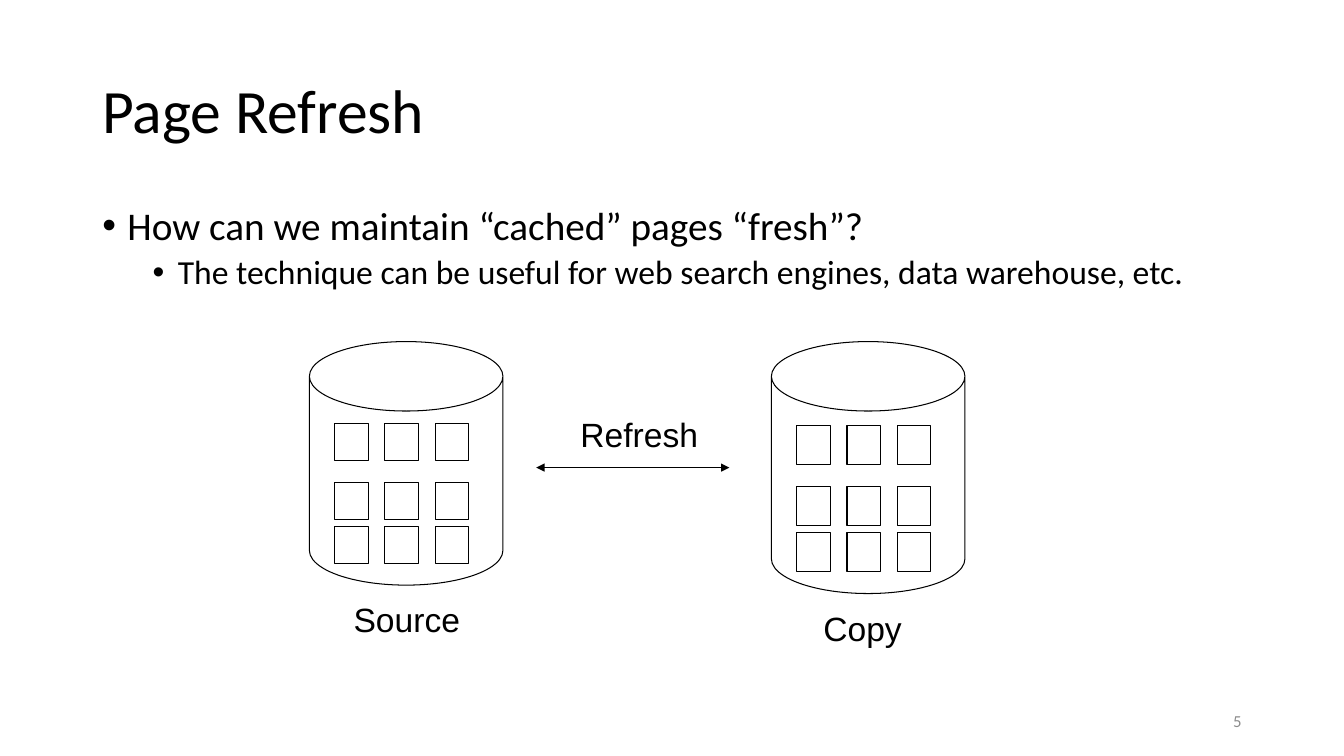
from lxml import etree
from pptx import Presentation
from pptx.dml.color import RGBColor
from pptx.enum.shapes import MSO_CONNECTOR, MSO_SHAPE
from pptx.enum.text import MSO_ANCHOR, PP_ALIGN
from pptx.oxml.ns import qn
from pptx.util import Pt

CAN, RECTANGLE = MSO_SHAPE.CAN, MSO_SHAPE.RECTANGLE
STRAIGHT = MSO_CONNECTOR.STRAIGHT
TOP, MIDDLE = MSO_ANCHOR.TOP, MSO_ANCHOR.MIDDLE
LEFT, RIGHT = PP_ALIGN.LEFT, PP_ALIGN.RIGHT

BLACK, GRAY = "000000", "8C8C8C"
CAN_TOP, CAN_WIDTH = 244, 138.24
PAGE_WIDTH, PAGE_MARGIN, PAGE_STEP = 24, 18, 36
# Page rows and page height as shares of the can height
PAGE_ROWS, PAGE_HEIGHT = (0.335, 0.577, 0.758), 0.153


def color(value):
    return RGBColor.from_string(value)


def set_line(line):
    line.color.rgb = color(BLACK)
    line.width = Pt(0.75)


def add_paragraph(paragraph, text, size, font="Calibri", text_color=BLACK, **formats):
    for name, value in formats.items():
        setattr(paragraph, name, value)
    run = paragraph.add_run()
    run.text = text
    for name, value in {"name": font, "size": Pt(size)}.items():
        setattr(run.font, name, value)
    run.font.color.rgb = color(text_color)


def add_text_box(slide, left, top, width, height, anchor=TOP, wrap=True):
    shape = slide.shapes.add_textbox(Pt(left), Pt(top), Pt(width), Pt(height))
    frame = shape.text_frame
    for name, value in {"word_wrap": wrap, "vertical_anchor": anchor}.items():
        setattr(frame, name, value)
    return frame


def add_label(slide, text, left, top, width):
    frame = add_text_box(slide, left, top, width, 36, wrap=False)
    add_paragraph(frame.paragraphs[0], text, 24, "Arial", alignment=LEFT)


def add_bullet(paragraph, text, size, indent, space_before):
    add_paragraph(paragraph, text, size, line_spacing=0.9, space_before=Pt(space_before))
    properties = paragraph._p.get_or_add_pPr()
    properties.set("marL", str(Pt(indent)))
    properties.set("indent", str(Pt(-18)))
    etree.SubElement(properties, qn("a:buFont")).set("typeface", "Arial")
    etree.SubElement(properties, qn("a:buChar")).set("char", "•")


def add_outline(group, kind, left, top, width, height):
    shape = group.shapes.add_shape(kind, Pt(left), Pt(top), Pt(width), Pt(height))
    shape.shadow.inherit = False
    shape.fill.background()
    set_line(shape.line)
    return shape


def add_database(slide, left, height):
    group = slide.shapes.add_group_shape()
    can = add_outline(group, CAN, left, CAN_TOP, CAN_WIDTH, height)
    can.adjustments[0] = 0.359
    for share in PAGE_ROWS:
        for column in range(3):
            add_outline(group, RECTANGLE, left + PAGE_MARGIN + column * PAGE_STEP,
                        CAN_TOP + share * height, PAGE_WIDTH, PAGE_HEIGHT * height)


def add_double_arrow(slide, start, end, top):
    connector = slide.shapes.add_connector(STRAIGHT, Pt(start), Pt(top), Pt(end), Pt(top))
    set_line(connector.line)
    line = connector.line._get_or_add_ln()
    for tag in ("a:headEnd", "a:tailEnd"):
        etree.SubElement(line, qn(tag)).set("type", "triangle")
    etree.SubElement(connector._element.spPr, qn("a:effectLst"))


def main():
    presentation = Presentation()
    presentation.slide_width, presentation.slide_height = Pt(960), Pt(540)
    slide = presentation.slides.add_slide(presentation.slide_layouts[6])

    # Title and bullets
    title = add_text_box(slide, 66, 28.75, 828, 104.4, MIDDLE)
    add_paragraph(title.paragraphs[0], "Page Refresh", 44, line_spacing=0.9)
    body = add_text_box(slide, 66, 143.75, 828, 342.6)
    add_bullet(body.paragraphs[0], "How can we maintain “cached” pages “fresh”?", 28, 18, 10)
    detail = body.add_paragraph()
    detail.level = 1
    add_bullet(detail, "The technique can be useful for web search engines, "
               "data warehouse, etc.", 24, 54, 5)

    # Source and copy databases
    add_database(slide, 221, 174)
    add_database(slide, 551, 180)
    add_label(slide, "Source", 245.5, 424, 91.4)
    add_label(slide, "Copy", 581, 430.5, 71.3)

    # Refresh arrow
    add_double_arrow(slide, 383, 521, 334)
    add_label(slide, "Refresh", 407.5, 292, 99.4)

    # Slide number
    number = add_text_box(slide, 678, 500.5, 216, 28.75, MIDDLE)
    add_paragraph(number.paragraphs[0], "5", 12, text_color=GRAY, alignment=RIGHT)

    presentation.save("out.pptx")


if __name__ == "__main__":
    main()
